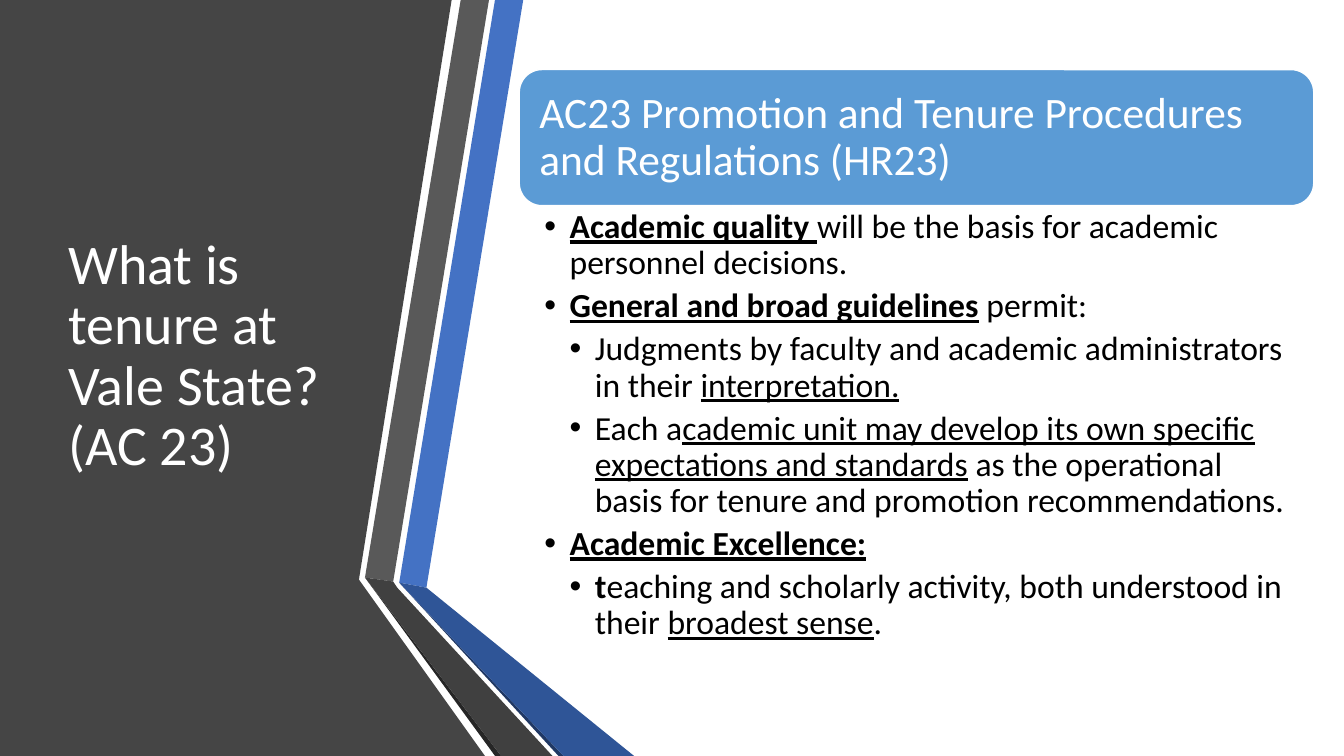
from lxml import etree
from pptx import Presentation
from pptx import util as u
from pptx.dml.color import RGBColor
from pptx.enum import shapes, text
from pptx.oxml.ns import qn

WIDTH, HEIGHT = 13.33, 7.5
FONT = "Calibri"
WHITE, BLACK, HEADER_BLUE = "FFFFFF", "000000", "5B9BD5"

# Content: a paragraph is (level, spans); a span is (text, marks), b = bold, u = underlined
TITLE = [(0, [("What is tenure at Vale State? (AC 23)", "")])]
HEADER = [(0, [("AC23 Promotion and Tenure Procedures and Regulations (HR23)", "")])]
POLICY = [
    (1, [("Academic quality ", "bu"),
         ("will be the basis for academic personnel decisions.", "")]),
    (1, [("General and broad guidelines", "bu"), (" permit:", "")]),
    (2, [("Judgments by faculty and academic administrators in their ", ""),
         ("interpretation.", "u")]),
    (2, [("Each a", ""),
         ("cademic unit may develop its own specific expectations and standards", "u"),
         (" as the operational basis for tenure and promotion recommendations.", "")]),
    (1, [("Academic Excellence:", "bu")]),
    (2, [("t", "b"),
         ("eaching and scholarly activity, both understood in their ", ""),
         ("broadest sense", "u"), (".", "")]),
]

# Decoration: where the ribbons fold, then outlines from back to front
GRAY_LEFT, GRAY_RIGHT = (3.62, 5.73), (3.9, 5.77)
BLUE_LEFT, BLUE_RIGHT = (3.96, 5.78), (4.23, 5.83)
OUTLINES = [
    ("454545", [(0, 0), (4.48, 0), (3.56, 5.75), (4.81, HEIGHT), (0, HEIGHT)]),
    ("4472C4", [BLUE_LEFT, BLUE_RIGHT, (5.19, 0), (4.91, 0)]),
    ("595959", [GRAY_LEFT, GRAY_RIGHT, (4.85, 0), (4.57, 0)]),
    ("262626", [GRAY_LEFT, (4.91, HEIGHT), (4.97, HEIGHT)]),
    ("203864", [BLUE_LEFT, (5.54, HEIGHT), (5.59, HEIGHT)]),
    ("2F5597", [BLUE_LEFT, (5.59, HEIGHT), (6.29, HEIGHT), BLUE_RIGHT]),
    ("404040", [GRAY_LEFT, (4.97, HEIGHT), (5.48, HEIGHT), (3.94, 5.83), GRAY_RIGHT]),
]

# Layout of the right column
COLUMN_LEFT, COLUMN_WIDTH = 5.15, 7.88
HEADER_TOP, HEADER_HEIGHT, POLICY_HEIGHT = 0.69, 1.35, 4.63
INSET = 0.07  # from the header's edge to its text
INDENT = 0.25


def color(value):
    return RGBColor.from_string(value)


def paint(shape, fill, line=None):
    shape.shadow.inherit = False
    shape.fill.solid()
    shape.fill.fore_color.rgb = color(fill)
    if line:
        shape.line.color.rgb = color(line)
        shape.line.width = u.Pt(1)
    else:
        shape.line.fill.background()


def add_outline(page, points, fill):
    start, *corners = [(u.Inches(x), u.Inches(y)) for x, y in points]
    builder = page.shapes.build_freeform(*start)
    builder.add_line_segments(corners, close=True)
    paint(builder.convert_to_shape(), fill)


def add_bullet(para, level):
    props = para._p.get_or_add_pPr()
    props.set("marL", str(u.Inches(INDENT * level)))
    props.set("indent", str(-u.Inches(INDENT)))
    etree.SubElement(props, qn("a:buFont")).set("typeface", "Arial")
    etree.SubElement(props, qn("a:buChar")).set("char", "•")


def add_text(page, paragraphs, place, size, fill, after,
             anchor=text.MSO_ANCHOR.MIDDLE, margins=(0.1, 0.05, 0.1, 0.05)):
    box = page.shapes.add_textbox(*map(u.Inches, place))
    frame = box.text_frame
    frame.word_wrap = True
    frame.vertical_anchor = anchor
    (frame.margin_left, frame.margin_top,
     frame.margin_right, frame.margin_bottom) = map(u.Inches, margins)
    for index, (level, spans) in enumerate(paragraphs):
        para = frame.add_paragraph() if index else frame.paragraphs[0]
        para.line_spacing = 0.9
        para.space_after = u.Pt(after)
        if level:
            para.level = level
            add_bullet(para, level)
        for words, marks in spans:
            span = para.add_run()
            span.text = words
            span.font.name = FONT
            span.font.size = u.Pt(size)
            span.font.color.rgb = color(fill)
            span.font.bold = "b" in marks
            span.font.underline = "u" in marks


def main():
    deck = Presentation()
    deck.slide_width, deck.slide_height = u.Inches(WIDTH), u.Inches(HEIGHT)
    page = deck.slides.add_slide(deck.slide_layouts[6])

    # Dark panel and folded ribbons
    for fill, points in OUTLINES:
        add_outline(page, points, fill)

    # Slide title
    add_text(page, TITLE, (0.58, 0.75, 3.04, 5.58), 40, WHITE, after=6)

    # Policy header
    place = (COLUMN_LEFT, HEADER_TOP, COLUMN_WIDTH, HEADER_HEIGHT)
    banner = page.shapes.add_shape(shapes.MSO_SHAPE.ROUNDED_RECTANGLE,
                                   *map(u.Inches, place))
    paint(banner, HEADER_BLUE, line=WHITE)
    place = (COLUMN_LEFT + INSET, HEADER_TOP + INSET,
             COLUMN_WIDTH - 2 * INSET, HEADER_HEIGHT - 2 * INSET)
    add_text(page, HEADER, place, 31, WHITE, after=10.85, margins=(0.13,) * 4)

    # Policy points
    place = (COLUMN_LEFT, HEADER_TOP + HEADER_HEIGHT, COLUMN_WIDTH, POLICY_HEIGHT)
    add_text(page, POLICY, place, 24, BLACK, after=4.8,
             anchor=text.MSO_ANCHOR.TOP, margins=(0.25, 0.04, 0.24, 0.04))

    deck.save("out.pptx")


if __name__ == "__main__":
    main()
